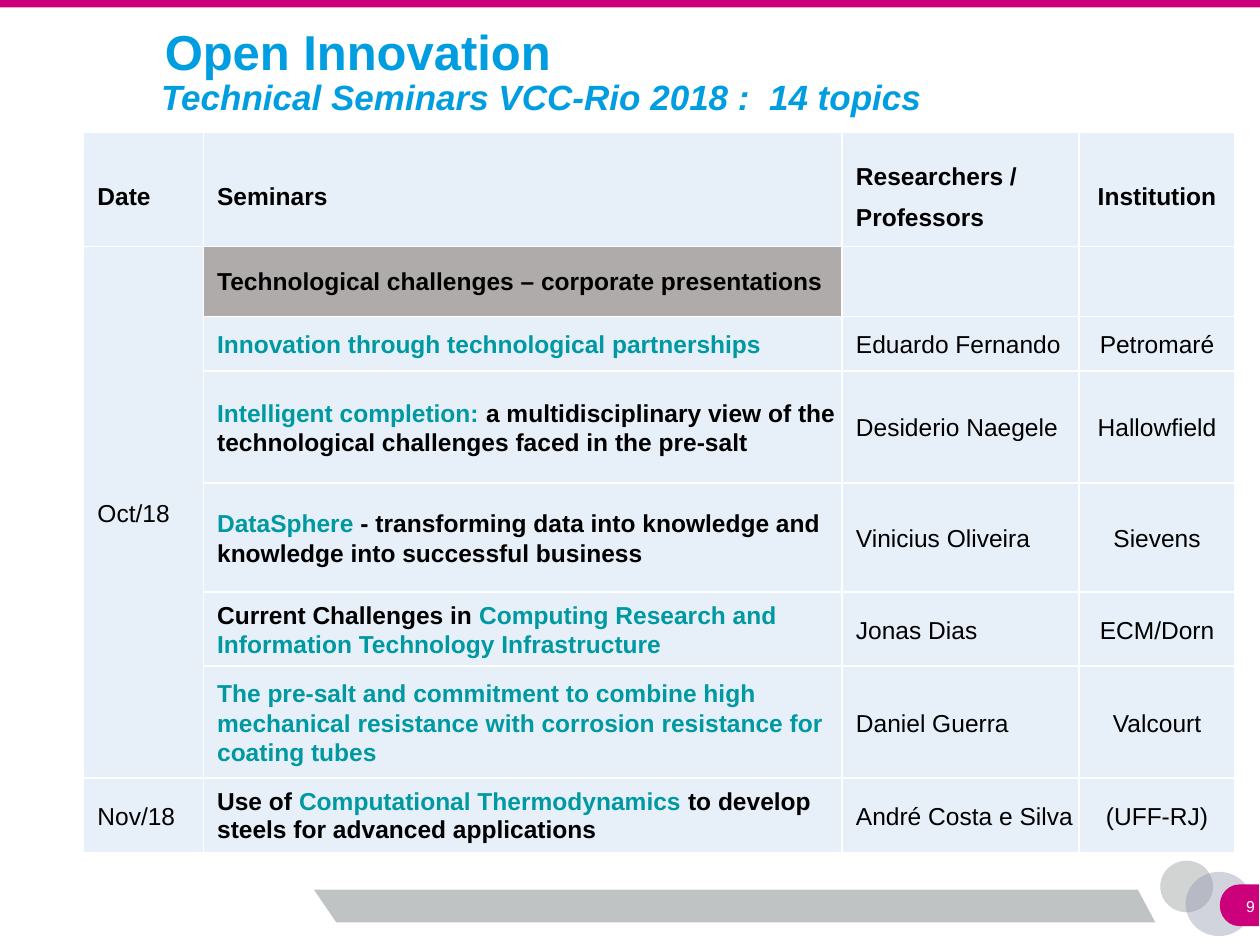
from lxml import etree
from pptx import Presentation
from pptx.dml.color import RGBColor
from pptx.enum.shapes import MSO_SHAPE
from pptx.enum.text import MSO_ANCHOR, MSO_AUTO_SIZE, PP_ALIGN
from pptx.oxml.ns import qn
from pptx.util import Pt

RECT, OVAL, DELAY = MSO_SHAPE.RECTANGLE, MSO_SHAPE.OVAL, MSO_SHAPE.FLOWCHART_DELAY
MID, LOW = MSO_ANCHOR.MIDDLE, MSO_ANCHOR.BOTTOM
LEFT, MIDDLE, RIGHT = PP_ALIGN.LEFT, PP_ALIGN.CENTER, PP_ALIGN.RIGHT
FIXED = MSO_AUTO_SIZE.NONE

HUES = {
    "pink": "CD007B", "blue": "009DE0", "teal": "0098A1", "black": "000000",
    "white": "FFFFFF", "pale": "E7EFF9", "stone": "AFABAB", "grey": "BFC3C3",
    "slate": "9095AC",
}
COLS = [68.4, 365.04, 135.36, 89.28]
ROWS = [65.2, 40, 31, 64, 62.3, 42.4, 64, 42.8]
HEAD = ["Date", "Seminars", "Researchers /\nProfessors", "Institution"]
TALKS = [
    ("Oct/18", "Technological challenges – corporate presentations", "", ""),
    ("", "*Innovation through technological partnerships*",
     "Eduardo Fernando", "Petromaré"),
    ("", "*Intelligent completion: *a multidisciplinary view of the "
     "technological challenges faced in the pre-salt",
     "Desiderio Naegele", "Hallowfield"),
    ("", "*DataSphere* - transforming data into knowledge and knowledge "
     "into successful business", "Vinicius Oliveira", "Sievens"),
    ("", "Current Challenges in *Computing Research and Information "
     "Technology Infrastructure*", "Jonas Dias", "ECM/Dorn"),
    ("", "*The pre-salt and commitment to combine high mechanical resistance "
     "with corrosion resistance for coating tubes*",
     "Daniel Guerra", "Valcourt"),
    ("Nov/18", "Use of *Computational Thermodynamics *to develop steels for "
     "advanced applications", "André Costa e Silva", "(UFF-RJ)"),
]


def rgb(hue):
    """Return the colour that a name stands for."""
    return RGBColor.from_string(HUES[hue])


def put(obj, **vals):
    """Set each given attribute on an object."""
    for key, val in vals.items():
        setattr(obj, key, val)


def ink(run, hue, **form):
    """Format one run of text."""
    put(run.font, name="Arial", **form)
    run.font.color.rgb = rgb(hue)


def paint(shape, hue, alpha=100):
    """Give a shape a plain fill with no line or shadow."""
    shape.shadow.inherit = False
    shape.fill.solid()
    shape.fill.fore_color.rgb = rgb(hue)
    shape.line.fill.background()
    if alpha < 100:
        tone = shape.fill._xPr.find(".//" + qn("a:srgbClr"))
        etree.SubElement(tone, qn("a:alpha"), val=str(alpha * 1000))


def block(slide, kind, box, hue, alpha=100):
    """Draw a preset shape in a box."""
    shape = slide.shapes.add_shape(kind, *map(Pt, box))
    paint(shape, hue, alpha)
    return shape


def write(shape, box, text, hue, frame, para, form):
    """Place a text shape and fill it with one formatted line."""
    put(shape, **dict(zip(("left", "top", "width", "height"), map(Pt, box))))
    body = shape.text_frame
    put(body, word_wrap=True, auto_size=FIXED, **frame)
    line = body.paragraphs[0]
    put(line, **para)
    run = line.add_run()
    run.text = text
    ink(run, hue, **form)


def titles(slide, box):
    """Set the title and the subtitle under it."""
    x, y, wide, high = box
    pad = {"margin_left": Pt(7.2), "margin_right": Pt(7.2),
           "margin_top": Pt(3.6), "margin_bottom": Pt(3.6),
           "vertical_anchor": LOW}
    para = {"line_spacing": 0.9, "alignment": LEFT}
    write(slide.shapes.title, (x + 2, y, 387, 42.5), "Open Innovation", "blue",
          pad, para, {"size": Pt(28), "bold": True})
    sub = slide.shapes.add_textbox(0, 0, 0, 0)
    write(sub, (x, y + high - 31.7, wide, 31.7),
          "Technical Seminars VCC-Rio 2018 :  14 topics", "blue", pad, para,
          {"size": Pt(20), "bold": True, "italic": True})


def edge(cell):
    """Draw white borders round a cell."""
    props = cell._tc.get_or_add_tcPr()
    for side in ("a:lnL", "a:lnR", "a:lnT", "a:lnB"):
        line = etree.SubElement(props, qn(side), w=str(Pt(1)))
        fill = etree.SubElement(line, qn("a:solidFill"))
        etree.SubElement(fill, qn("a:srgbClr"), val=HUES["white"])


def fill_cell(cell, text, row, col):
    """Style a cell and write its text, with starred parts in teal."""
    edge(cell)
    cell.fill.solid()
    cell.fill.fore_color.rgb = rgb("stone" if (row, col) == (1, 1) else "pale")
    last = col == len(COLS) - 1
    put(cell, vertical_anchor=MID, margin_left=Pt(0.7 if last else 7.9),
        margin_right=Pt(0.7), margin_top=Pt(0.7), margin_bottom=0)
    tight = col == 1 and row in (1, len(TALKS))
    space = 1.5 if row == 0 else 1 if tight else 1.07
    for num, part in enumerate(text.split("\n")):
        body = cell.text_frame
        line = body.add_paragraph() if num else body.paragraphs[0]
        put(line, line_spacing=space, alignment=MIDDLE if last else LEFT)
        for turn, piece in enumerate(part.split("*")):
            if piece:
                run = line.add_run()
                run.text = piece
                ink(run, "teal" if turn % 2 else "black", size=Pt(14),
                    bold=row == 0 or col == 1)


def agenda(slide, box):
    """Build the table of seminars."""
    data = [HEAD, *TALKS]
    frame = slide.shapes.add_table(len(ROWS), len(COLS), *map(Pt, box))
    table = frame.table
    put(table, first_row=False, horz_banding=False)
    for col, wide in zip(table.columns, COLS):
        col.width = Pt(wide)
    for row, high in zip(table.rows, ROWS):
        row.height = Pt(high)
    for r, texts in enumerate(data):
        for c, text in enumerate(texts):
            fill_cell(table.cell(r, c), text, r, c)
    table.cell(1, 0).merge(table.cell(6, 0))


def footer(slide, box):
    """Draw the slanted bar, the circles and the page number."""
    x, y, wide, high = box
    top, low, end = y + 14.4, y + 33.1, x + wide
    path = slide.shapes.build_freeform(Pt(x), Pt(top), scale=1.0)
    path.add_line_segments([(Pt(a), Pt(b)) for a, b in (
        (650.2, top), (660.2, low), (x + 12.8, low))], close=True)
    paint(path.convert_to_shape(), "grey")
    block(slide, OVAL, (end - 57, y - 2.2, 30.2, 29.5), "grey", 70)
    block(slide, OVAL, (end - 42.5, y + 4.2, 38.2, 36.7), "slate", 40)
    block(slide, DELAY, (end - 23, y + 11.4, 22.3, 23.8), "pink").rotation = 180
    page = slide.shapes.add_textbox(0, 0, 0, 0)
    write(page, (end - 32.4, y + 12.2, 32.4, 23), "9", "white",
          {"margin_left": Pt(2.9), "margin_right": Pt(2.9),
           "vertical_anchor": MID}, {"alignment": RIGHT}, {"size": Pt(9)})


def main():
    """Build the slide and save it."""
    deck = Presentation()
    put(deck, slide_width=Pt(720), slide_height=Pt(540))
    slide = deck.slides.add_slide(deck.slide_layouts[5])
    block(slide, RECT, (0, 0, 720, 4.3), "pink")
    footer(slide, (179.4, 494, 540.6, 46))
    agenda(slide, (47.8, 75.8, sum(COLS), sum(ROWS)))
    titles(slide, (85, 7.2, 583.2, 64.1))
    deck.save("out.pptx")


if __name__ == "__main__":
    main()
